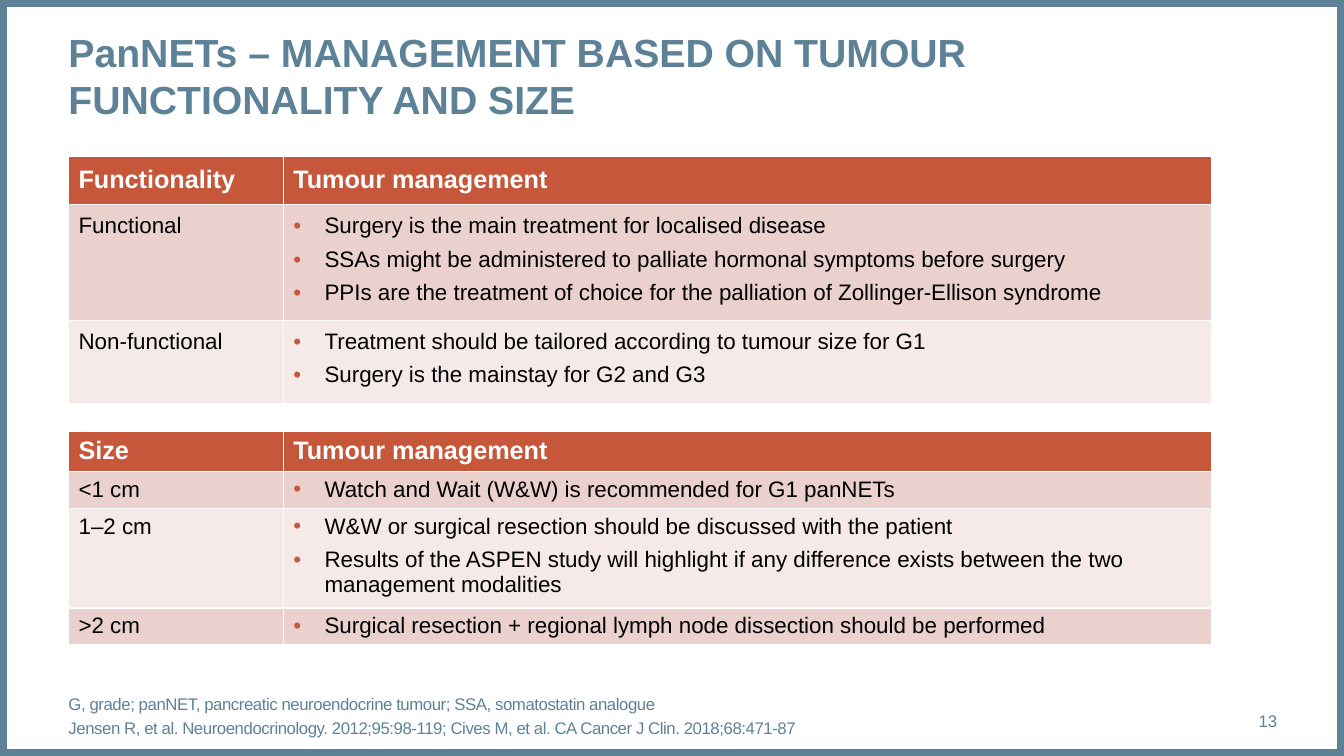
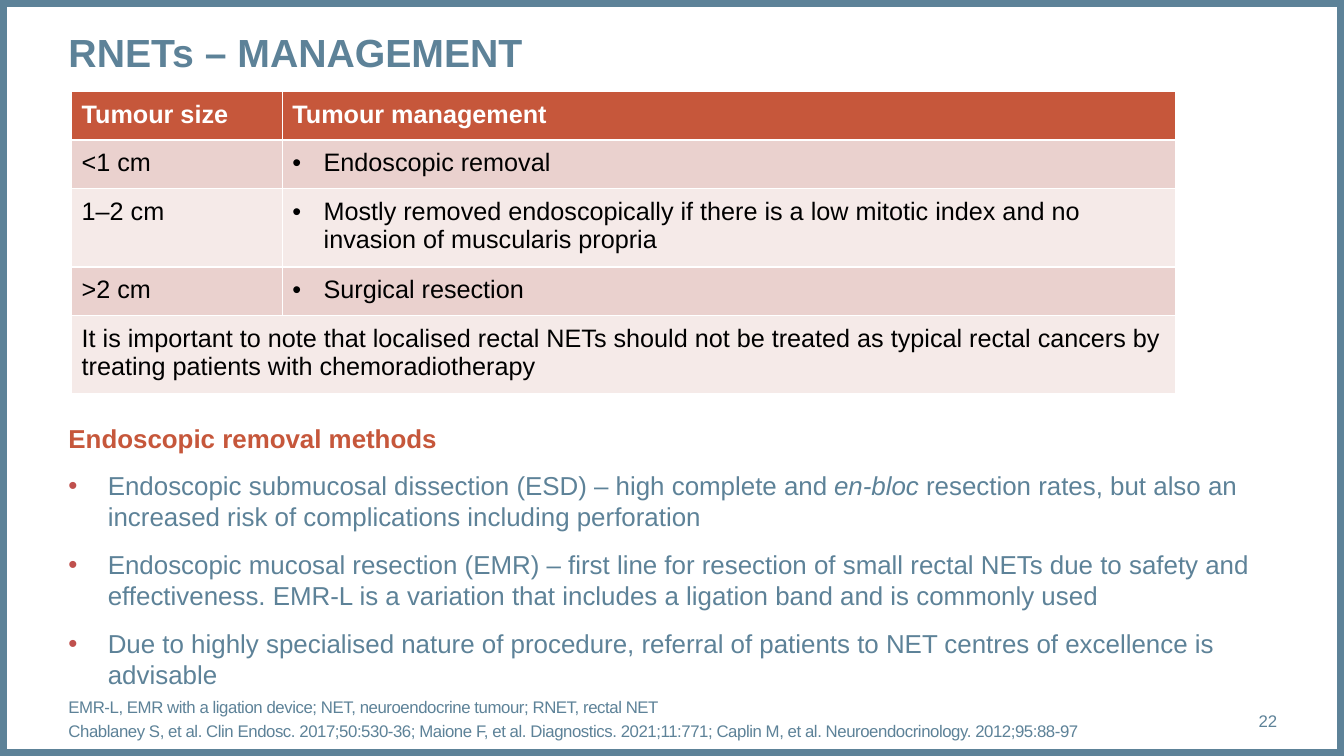
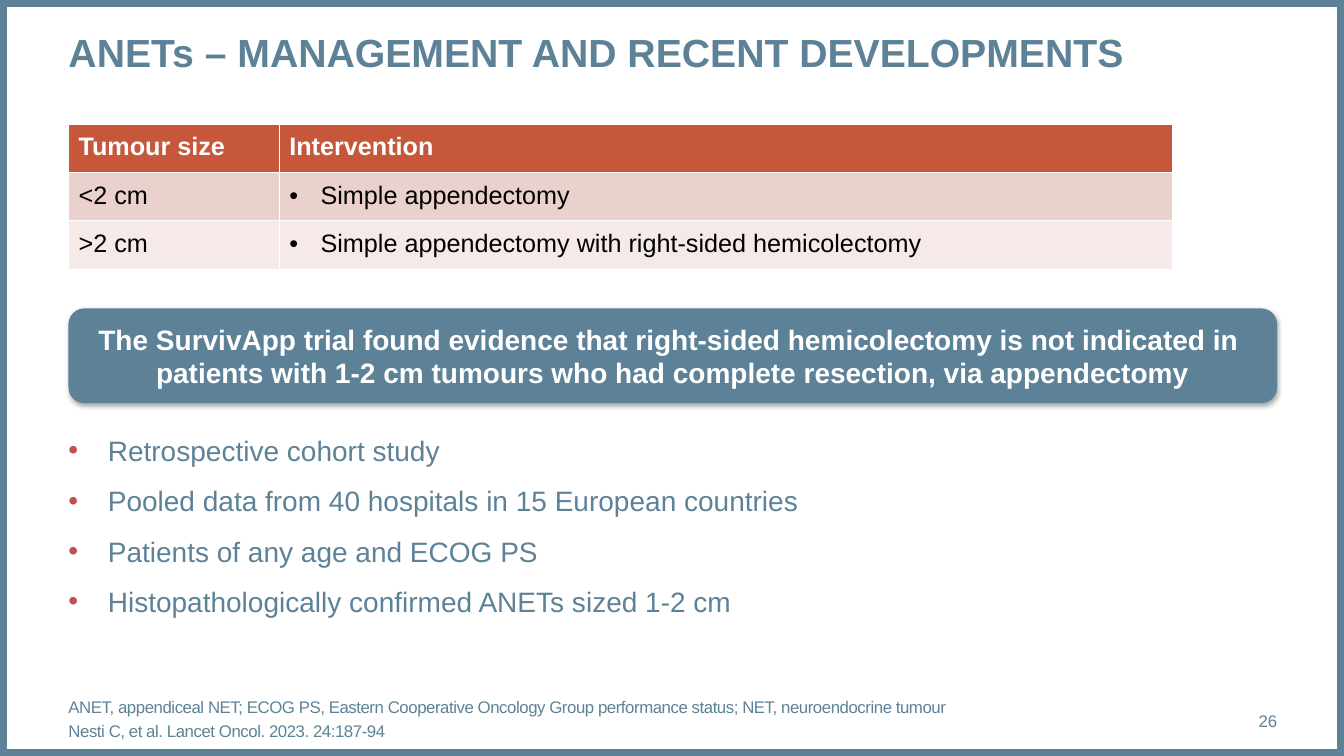
from lxml.etree import SubElement
from pptx import Presentation
from pptx.dml.color import RGBColor
from pptx.enum.shapes import MSO_SHAPE
from pptx.enum.text import MSO_ANCHOR, PP_ALIGN
from pptx.oxml import parse_xml
from pptx.oxml.ns import nsdecls, qn
from pptx.util import Inches, Pt

COLOURS = {"slate": "5D8298", "rust": "C6573B", "red": "C0504D", "white": "FFFFFF",
           "black": "000000", "band": "EAD1CE", "pale": "F5EAE8"}
FONT = "Arial"

presentation = Presentation()
presentation.slide_width = Inches(40 / 3)
presentation.slide_height = Inches(7.5)

# The grid has 100 columns and 100 rows
COLUMN = presentation.slide_width / 100
ROW = presentation.slide_height / 100
LEFT, TEXT_WIDTH = 5.1, 89.93
TITLE_SIZE, SMALL_SIZE = 28, 12


def place(left, top, width, height):
    return int(left * COLUMN), int(top * ROW), int(width * COLUMN), int(height * ROW)


def write(frame, paragraphs, size, colour, bold=False, bullet=None, indent=0.31,
          before=0, align=PP_ALIGN.LEFT, tracking=0):
    """Write paragraphs, each a string or a list of (text, italic) runs."""
    frame.word_wrap = True
    for index, content in enumerate(paragraphs):
        paragraph = frame.paragraphs[0] if index == 0 else frame.add_paragraph()
        paragraph.alignment = align
        paragraph.space_before = Pt(before if index else 0)
        if bullet:
            properties = paragraph._p.get_or_add_pPr()
            properties.set("marL", str(Inches(indent)))
            properties.set("indent", str(-Inches(indent)))
            SubElement(SubElement(properties, qn("a:buClr")), qn("a:srgbClr")).set("val", COLOURS[bullet])
            SubElement(properties, qn("a:buFont")).set("typeface", FONT)
            SubElement(properties, qn("a:buChar")).set("char", "•")
        for text, italic in [(content, False)] if isinstance(content, str) else content:
            if text == "\n":
                paragraph.add_line_break()
                continue
            run = paragraph.add_run()
            run.text = text
            run.font.name, run.font.size = FONT, Pt(size)
            run.font.bold, run.font.italic = bold, italic
            run.font.color.rgb = RGBColor.from_string(COLOURS[colour])
            if tracking:
                run._r.get_or_add_rPr().set("spc", str(tracking))


# Content: a list in a table cell is bulleted, a row with one cell spans the table
SLIDES = [
    {"title": "PanNETs – MANAGEMENT BASED ON TUMOUR FUNCTIONALITY AND SIZE",
     "number": "13", "footer_top": 92.27,
     "footer": ["G, grade; panNET, pancreatic neuroendocrine tumour; SSA, somatostatin analogue",
                "Jensen R, et al. Neuroendocrinology. 2012;95:98-119; Cives M, et al. "
                "CA Cancer J Clin. 2018;68:471-87"],
     "tables": [
         {"left": LEFT, "top": 20.67, "columns": [15.98, 69.08], "heights": [6.13, 14.4, 11.07],
          "inset": 0.09, "size": 16, "bullet": "rust",
          "cells": [
              ["Functionality", "Tumour management"],
              ["Functional", ["Surgery is the main treatment for localised disease",
                              "SSAs might be administered to palliate hormonal symptoms before surgery",
                              "PPIs are the treatment of choice for the palliation of "
                              "Zollinger-Ellison syndrome"]],
              ["Non-functional", ["Treatment should be tailored according to tumour size for G1",
                                  "Surgery is the mainstay for G2 and G3"]]]},
         {"left": LEFT, "top": 57.07, "columns": [15.98, 69.08], "heights": [4.93, 4.53, 12.4, 4.53],
          "inset": 0.05, "size": 16, "bullet": "rust",
          "cells": [
              ["Size", "Tumour management"],
              ["<1 cm", ["Watch and Wait (W&W) is recommended for G1 panNETs"]],
              ["1–2 cm", ["W&W or surgical resection should be discussed with the patient",
                          "Results of the ASPEN study will highlight if any difference exists "
                          "between the two management modalities"]],
              [">2 cm", ["Surgical resection + regional lymph node dissection should be performed"]]]}]},
    {"title": "RNETs – MANAGEMENT", "number": "22", "footer_top": 92.67,
     "footer": ["EMR-L, EMR with a ligation device; NET, neuroendocrine tumour; RNET, rectal NET",
                "Chablaney S, et al. Clin Endosc. 2017;50:530-36; Maione F, et al. Diagnostics. "
                "2021;11:771; Caplin M, et al. Neuroendocrinology. 2012;95:88-97"],
     "tables": [
         {"left": 5.33, "top": 12.13, "columns": [15.68, 66.45],
          "heights": [6, 6.13, 9.87, 6.13, 9.73], "inset": 0.09, "size": 18, "bullet": "black",
          "cells": [
              ["Tumour size", "Tumour management"],
              ["<1 cm", ["Endoscopic removal"]],
              ["1–2 cm", ["Mostly removed endoscopically if there is a low mitotic index and no "
                          "invasion of muscularis propria"]],
              [">2 cm", ["Surgical resection"]],
              ["It is important to note that localised rectal NETs should not be treated as typical "
               "rectal cancers by treating patients with chemoradiotherapy"]]}],
     "heading": ("Endoscopic removal methods", 55.87, 5),
     "body_top": 62.15, "body_height": 29.2, "body_size": 18.5,
     "body": [[("Endoscopic submucosal dissection (ESD) – high complete and ", False),
               ("en-bloc ", True),
               ("resection rates, but also an increased risk of complications including perforation",
                False)],
              "Endoscopic mucosal resection (EMR) – first line for resection of small rectal NETs due "
              "to safety and effectiveness. EMR-L is a variation that includes a ligation band and is "
              "commonly used",
              "Due to highly specialised nature of procedure, referral of patients to NET centres of "
              "excellence is advisable"]},
    {"title": "ANETs – MANAGEMENT AND RECENT DEVELOPMENTS", "number": "26", "footer_top": 92.67,
     "footer": ["ANET, appendiceal NET; ECOG PS, Eastern Cooperative Oncology Group performance "
                "status; NET, neuroendocrine tumour",
                "Nesti C, et al. Lancet Oncol. 2023. 24:187-94"],
     "tables": [
         {"left": LEFT, "top": 16.4, "columns": [15.68, 66.45], "heights": [6, 6.13, 6.13],
          "inset": 0.09, "size": 18, "bullet": "black",
          "cells": [["Tumour size", "Intervention"],
                    ["<2 cm", ["Simple appendectomy"]],
                    [">2 cm", ["Simple appendectomy with right-sided hemicolectomy"]]]}],
     "callout": [("The SurvivApp trial found evidence that right-sided hemicolectomy is not "
                  "indicated in ", False), ("\n", False),
                 ("patients with 1-2 cm tumours who had complete resection, via appendectomy", False)],
     "body_top": 57.33, "body_height": 29.47, "body_size": 20,
     "body": ["Retrospective cohort study",
              "Pooled data from 40 hospitals in 15 European countries",
              "Patients of any age and ECOG PS",
              "Histopathologically confirmed ANETs sized 1-2 cm"]},
]

for content in SLIDES:
    slide = presentation.slides.add_slide(presentation.slide_layouts[6])

    # Frame around the slide
    frame_shape = slide.shapes.add_shape(MSO_SHAPE.RECTANGLE, *place(0, 0, 100, 100))
    frame_shape.shadow.inherit = False
    frame_shape.fill.background()
    frame_shape.line.color.rgb = RGBColor.from_string(COLOURS["slate"])
    frame_shape.line.width = Pt(10)

    # Title, footer, page number and body
    text_boxes = [
        ((LEFT, 3.73, TEXT_WIDTH, 12.53), MSO_ANCHOR.TOP, [content["title"]],
         {"size": TITLE_SIZE, "colour": "slate", "bold": True}),
        ((LEFT, content["footer_top"], 83.48, 5.33), MSO_ANCHOR.BOTTOM, content["footer"],
         {"size": SMALL_SIZE, "colour": "slate", "before": 3, "tracking": -30}),
        ((86.25, 92.67, 8.78, 5.33), MSO_ANCHOR.MIDDLE, [content["number"]],
         {"size": SMALL_SIZE, "colour": "slate", "align": PP_ALIGN.RIGHT})]
    if "heading" in content:
        heading, top, height = content["heading"]
        text_boxes.append(((LEFT, top, TEXT_WIDTH, height), MSO_ANCHOR.TOP, [heading],
                           {"size": content["body_size"], "colour": "rust", "bold": True}))
    if "body" in content:
        text_boxes.append(((LEFT, content["body_top"], TEXT_WIDTH, content["body_height"]),
                           MSO_ANCHOR.TOP, content["body"],
                           {"size": content["body_size"], "colour": "slate", "bullet": "red",
                            "indent": 0.39, "before": 12}))
    for position, anchor, paragraphs, style in text_boxes:
        text_frame = slide.shapes.add_textbox(*place(*position)).text_frame
        text_frame.margin_left = text_frame.margin_right = 0
        text_frame.margin_top = text_frame.margin_bottom = 0
        text_frame.vertical_anchor = anchor
        write(text_frame, paragraphs, **style)

    # Callout with a soft shadow
    if "callout" in content:
        callout = slide.shapes.add_shape(MSO_SHAPE.ROUNDED_RECTANGLE,
                                         *place(LEFT, 40.8, TEXT_WIDTH, 12.53))
        callout.fill.solid()
        callout.fill.fore_color.rgb = RGBColor.from_string(COLOURS["slate"])
        callout.line.fill.background()
        callout._element.spPr.append(parse_xml(
            f'<a:effectLst {nsdecls("a")}><a:outerShdw blurRad="{Pt(3.1)}" dist="{Pt(1.8)}" '
            f'dir="5400000" rotWithShape="0"><a:srgbClr val="{COLOURS["black"]}">'
            '<a:alpha val="35000"/></a:srgbClr></a:outerShdw></a:effectLst>'))
        callout.text_frame.vertical_anchor = MSO_ANCHOR.MIDDLE
        write(callout.text_frame, [content["callout"]], 20, "white", bold=True, align=PP_ALIGN.CENTER)

    # Tables, whose default style draws the white rules
    for data in content["tables"]:
        position = place(data["left"], data["top"], sum(data["columns"]), sum(data["heights"]))
        table = slide.shapes.add_table(len(data["heights"]), len(data["columns"]), *position).table
        table.horz_banding = False
        for column, width in zip(table.columns, data["columns"]):
            column.width = int(width * COLUMN)
        for row_index, texts in enumerate(data["cells"]):
            table.rows[row_index].height = int(data["heights"][row_index] * ROW)
            header = row_index == 0
            fill = "rust" if header else ("pale", "band")[row_index % 2]
            if len(texts) == 1:
                table.cell(row_index, 0).merge(table.cell(row_index, len(data["columns"]) - 1))
            for column_index, cell in enumerate(table.rows[row_index].cells):
                cell.margin_top = cell.margin_bottom = Inches(data["inset"])
                cell.fill.solid()
                cell.fill.fore_color.rgb = RGBColor.from_string(COLOURS[fill])
                if column_index >= len(texts):
                    continue
                text = texts[column_index]
                bulleted = isinstance(text, list)
                write(cell.text_frame, text if bulleted else [text],
                      18 if header else data["size"], "white" if header else "black", bold=header,
                      bullet=data["bullet"] if bulleted else None, before=6)

presentation.save("out.pptx")
